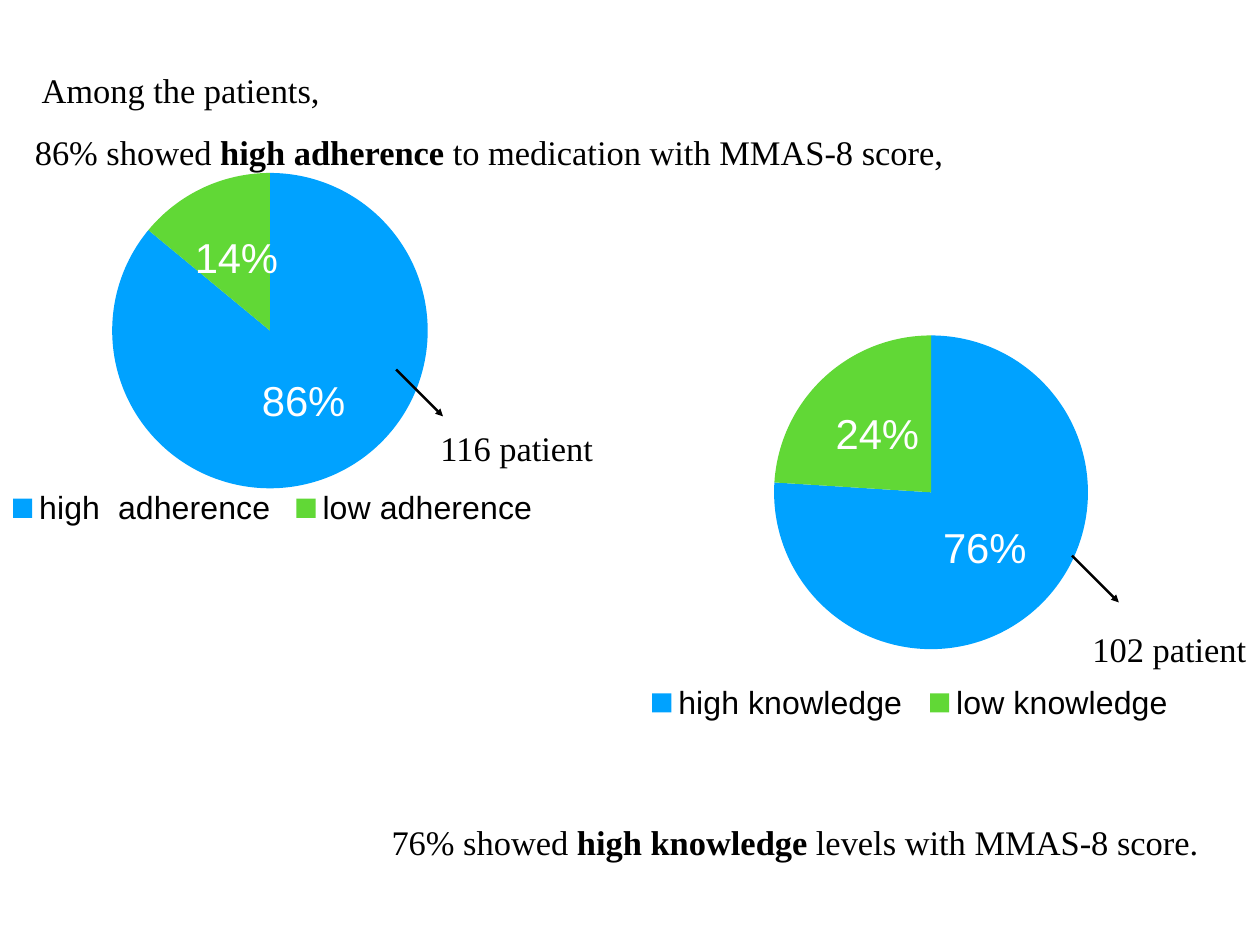
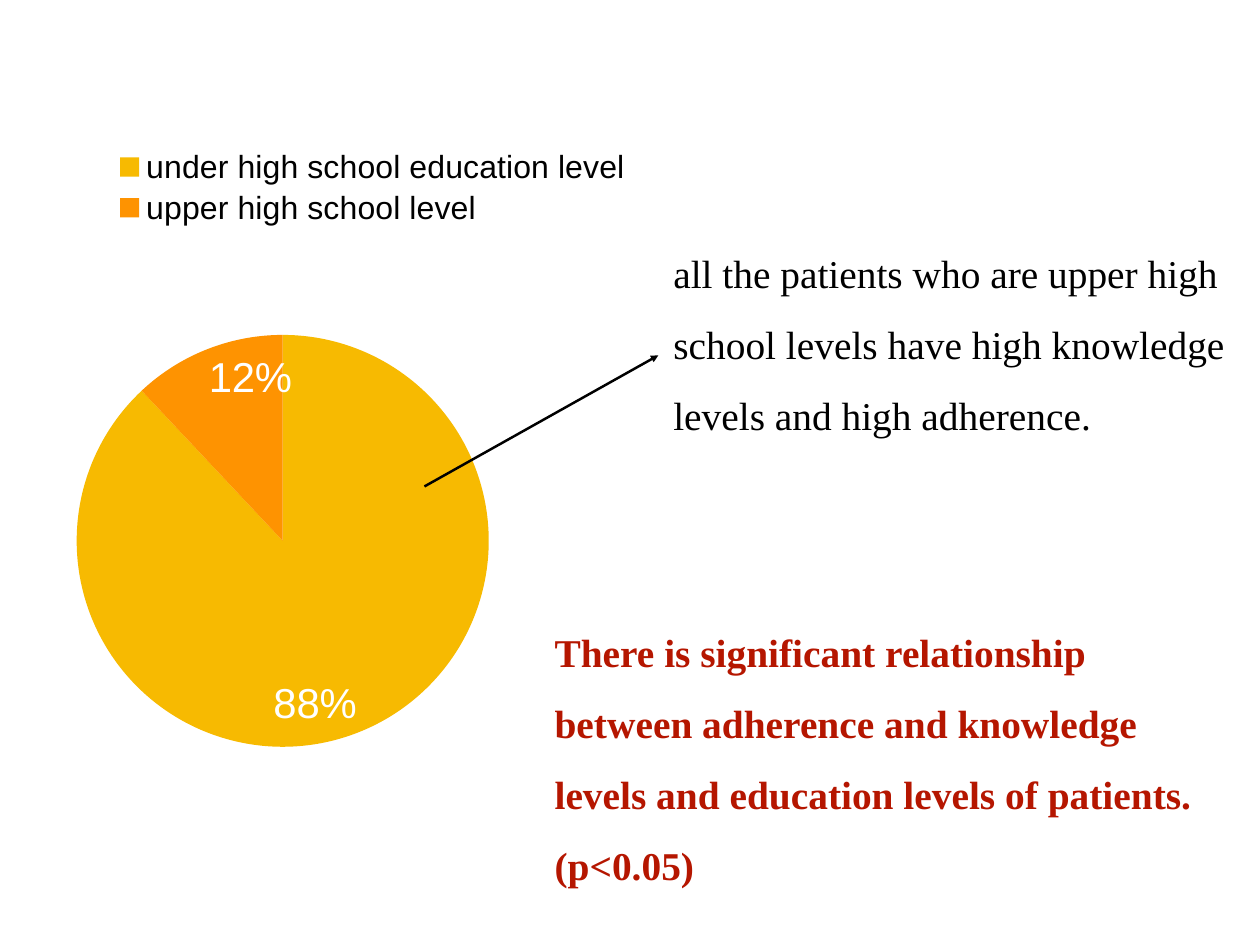
from dataclasses import dataclass

from lxml import etree
from pptx import Presentation
from pptx import util as u
from pptx.chart.data import CategoryChartData
from pptx.dml.color import RGBColor
from pptx.enum import chart as charts, shapes, text
from pptx.oxml import ns

# Shared look: a grid of 64 columns by 48 rows
WIDTH, HEIGHT = u.Inches(14.22), u.Inches(10.67)
COLUMNS, ROWS = 64, 48
SERIF, SANS = "Times New Roman", "Arial"
BLACK, WHITE, RED = "000000", "FFFFFF", "B51600"
BLUE_GREEN = ("00A2FF", "61D836")
AMBER_ORANGE = ("F7BA01", "FE9301")
BOTTOM, TOP = charts.XL_LEGEND_POSITION.BOTTOM, charts.XL_LEGEND_POSITION.TOP
CENTER = charts.XL_LABEL_POSITION.CENTER
INSIDE_END = charts.XL_LABEL_POSITION.INSIDE_END

Box = tuple[float, float, float, float]


@dataclass
class Pie:
    box: Box  # left, top, width, height in columns and rows
    plot: Box  # shares of the chart
    legend: Box  # shares of the chart
    shares: dict[str, int]
    colors: tuple[str, str] = BLUE_GREEN
    legend_side: charts.XL_LEGEND_POSITION = BOTTOM
    label_position: charts.XL_LABEL_POSITION = CENTER


@dataclass
class Arrow:
    start: tuple[float, float]
    end: tuple[float, float]


def col(n: float) -> int:
    return round(WIDTH * n / COLUMNS)


def row(n: float) -> int:
    return round(HEIGHT * n / ROWS)


def place(box: Box) -> tuple[int, int, int, int]:
    left, top, width, height = box
    return col(left), row(top), col(width), row(height)


def color(value: str) -> RGBColor:
    return RGBColor.from_string(value)


def style(font, size: float, hex_color: str, name: str) -> None:
    font.size, font.name = u.Pt(size), name
    font.color.rgb = color(hex_color)


def add_text(slide, box: Box, *paragraphs: str, size: float = 28,
             hex_color: str = BLACK, wrap: bool = True) -> None:
    """Write paragraphs; text between ** marks is bold."""
    frame = slide.shapes.add_textbox(*place(box)).text_frame
    frame.word_wrap = wrap
    frame.auto_size = text.MSO_AUTO_SIZE.SHAPE_TO_FIT_TEXT
    frame.vertical_anchor = text.MSO_ANCHOR.MIDDLE
    frame.margin_left = frame.margin_right = u.Inches(0.06)
    frame.margin_top = frame.margin_bottom = u.Inches(0.06)
    for i, content in enumerate(paragraphs):
        paragraph = frame.add_paragraph() if i else frame.paragraphs[0]
        paragraph.line_spacing = 1.5
        for j, part in enumerate(content.split("**")):
            if part:
                run = paragraph.add_run()
                run.text = part
                run.font.bold = j % 2 == 1
                style(run.font, size, hex_color, SERIF)


def set_layout(layout, box: Box, inner: bool = False) -> None:
    """Fill a c:layout element with a manual position."""
    for child in list(layout):
        layout.remove(child)
    manual = etree.SubElement(layout, ns.qn("c:manualLayout"))
    settings = [("layoutTarget", "inner")] if inner else []
    settings += [("xMode", "edge"), ("yMode", "edge"), *zip("xywh", box)]
    for tag, value in settings:
        etree.SubElement(manual, ns.qn(f"c:{tag}")).set("val", str(value))


def add_pie(slide, pie: Pie) -> None:
    data = CategoryChartData()
    data.categories = list(pie.shares)
    data.add_series("Series 1", list(pie.shares.values()))
    chart = slide.shapes.add_chart(
        charts.XL_CHART_TYPE.PIE, *place(pie.box), data).chart
    chart.has_title = False
    style(chart.font, 10, BLACK, "Roboto")

    # Slices
    plot = chart.plots[0]
    plot.vary_by_categories = False
    for i, hex_color in enumerate(pie.colors):
        slice_format = plot.series[0].points[i].format
        slice_format.fill.solid()
        slice_format.fill.fore_color.rgb = color(hex_color)
        slice_format.line.fill.background()

    # Percentages
    plot.has_data_labels = True
    labels = plot.data_labels
    labels.show_percentage, labels.show_value = True, False
    labels.number_format, labels.number_format_is_linked = "#,##0%", False
    labels.position = pie.label_position
    style(labels.font, 34, WHITE, SANS)

    # Legend and layout
    chart.has_legend = True
    legend = chart.legend
    legend.position, legend.include_in_layout = pie.legend_side, True
    style(legend.font, 26, BLACK, SANS)
    area = chart.element.find(".//" + ns.qn("c:plotArea"))
    for layout in area.findall(ns.qn("c:layout")):
        area.remove(layout)
    plot_layout = etree.Element(ns.qn("c:layout"))
    area.insert(0, plot_layout)
    set_layout(plot_layout, pie.plot, inner=True)
    key = chart.element.find(".//" + ns.qn("c:legend"))
    for layout in key.findall(ns.qn("c:layout")):
        key.remove(layout)
    key_layout = etree.Element(ns.qn("c:layout"))
    key.find(ns.qn("c:legendPos")).addnext(key_layout)
    set_layout(key_layout, pie.legend)


def add_arrow(slide, arrow: Arrow) -> None:
    (x1, y1), (x2, y2) = arrow.start, arrow.end
    connector = slide.shapes.add_connector(
        shapes.MSO_CONNECTOR.STRAIGHT, col(x1), row(y1), col(x2), row(y2))
    connector.line.width = u.Pt(2)
    connector.line.color.rgb = color(BLACK)
    properties = connector.element.spPr
    line = properties.find(ns.qn("a:ln"))
    etree.SubElement(line, ns.qn("a:tailEnd")).set("type", "triangle")
    etree.SubElement(properties, ns.qn("a:effectLst"))


def build_scores(slide) -> None:
    # Adherence
    add_pie(slide, Pie((-1.3, 8.6, 30.33, 18.63), (0.23, 0.01, 0.53, 0.86),
                       (0.04, 0.87, 0.92, 0.12),
                       {"high  adherence": 86, "low adherence": 14}))
    add_text(slide, (1.5, 2.9, 51.5, 5.4), " Among the patients,",
             "86% showed **high adherence** to medication with MMAS-8 score,")
    add_arrow(slide, Arrow((20.12, 18.77), (22.5, 21.15)))
    add_text(slide, (22.1, 21.02, 8.33, 2.43), "116 patient", wrap=False)

    # Knowledge
    add_pie(slide, Pie((31.37, 16.83, 30.33, 20.97), (0.26, 0.01, 0.53, 0.76),
                       (0.03, 0.85, 0.92, 0.1),
                       {"high knowledge": 76, "low knowledge": 24}))
    add_text(slide, (19.62, 41, 42.03, 2.43),
             "76% showed **high knowledge** levels with MMAS-8 score.",
             wrap=False)
    add_arrow(slide, Arrow((54.45, 28.22), (56.83, 30.6)))
    add_text(slide, (55.22, 31.19, 8.37, 2.43), "102 patient", wrap=False)


def build_education(slide) -> None:
    add_pie(slide, Pie((3.42, 7.02, 29.57, 31.23), (0.01, 0.32, 0.72, 0.67),
                       (0.05, 0.01, 0.95, 0.14),
                       {"under high school education level": 88,
                        "upper high school level": 12},
                       AMBER_ORANGE, TOP, INSIDE_END))
    # Findings
    add_text(slide, (27.9, 31.41, 33.53, 13),
             "**There is significant relationship between adherence and "
             "knowledge levels and education levels of patients. (p<0.05)**",
             size=32, hex_color=RED)
    add_arrow(slide, Arrow((21.56, 24.71), (33.44, 18.05)))
    add_text(slide, (33.93, 12.06, 33.53, 9.59),
             "all the patients who are upper high school levels have high "
             "knowledge levels and high adherence.", size=32)


def main() -> None:
    deck = Presentation()
    deck.slide_width, deck.slide_height = WIDTH, HEIGHT
    blank = deck.slide_layouts[6]
    for build in (build_scores, build_education):
        build(deck.slides.add_slide(blank))
    deck.save("out.pptx")


if __name__ == "__main__":
    main()
